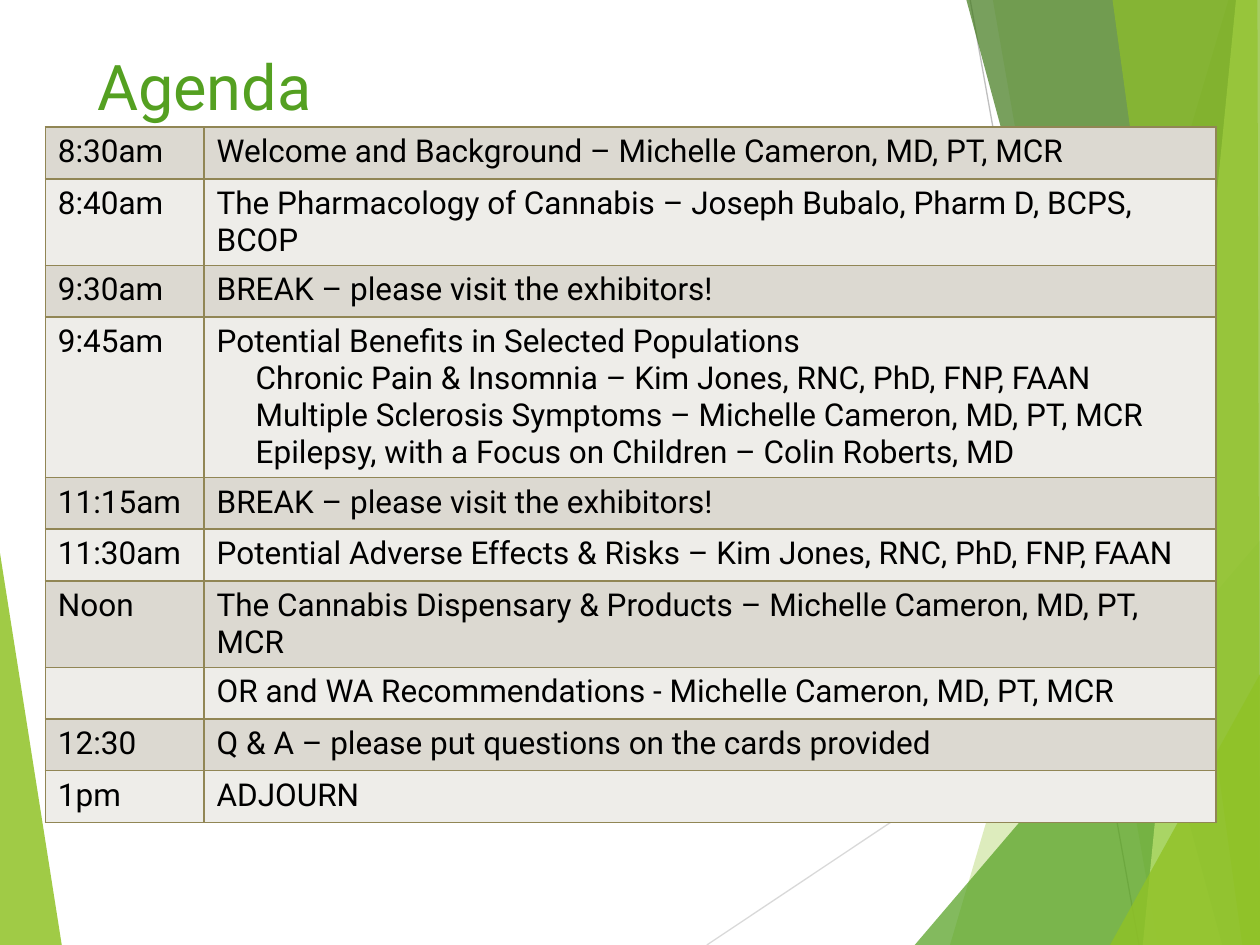
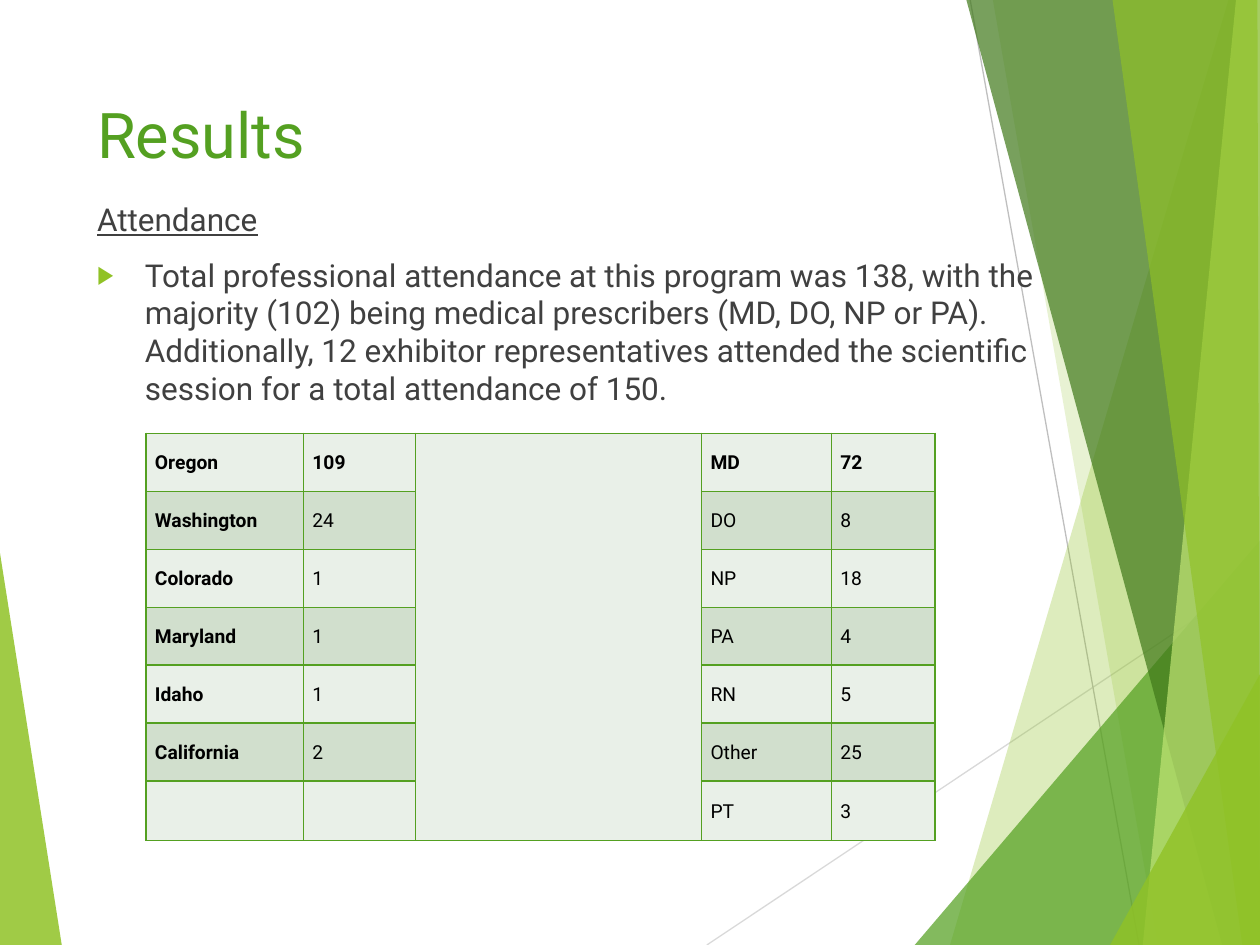
"""Build the agenda and results slides of a cannabis education program."""
from lxml import etree
from pptx import Presentation
from pptx.dml.color import RGBColor
from pptx.enum.shapes import MSO_CONNECTOR
from pptx.enum.text import MSO_ANCHOR, MSO_AUTO_SIZE, PP_ALIGN
from pptx.oxml.ns import qn
from pptx.util import Pt

PX = 9144
FONT = "Roboto"
STRAIGHT = MSO_CONNECTOR.STRAIGHT
TOP, MIDDLE = MSO_ANCHOR.TOP, MSO_ANCHOR.MIDDLE
LEFT = PP_ALIGN.LEFT
NO_AUTOFIT = MSO_AUTO_SIZE.NONE

COLORS = {
    "lime": "90C226",
    "green": "54A021",
    "forest": "3F7819",
    "pale": "C0E474",
    "light_gray": "D9D9D9",
    "gray": "BFBFBF",
    "body": "404040",
    "black": "000000",
    "olive": "918655",
    "sand_dark": "DCD9D1",
    "sand_light": "EEEDE9",
    "mint_dark": "D1DFCD",
    "mint_light": "E9F0E8",
}

RAYS = [
    ((561, 750), (1000, 457), "light_gray"),
    ((770, 0), (904, 750), "gray"),
]
LEFT_FACET = ([(0, 439), (49, 750), (0, 750)], "lime", 85)
RIGHT_FACETS = [
    ([(975, 0), (754, 750), (1000, 750), (1000, 0)], "lime", 30),
    ([(788, 0), (919, 750), (1000, 750), (1000, 0)], "lime", 20),
    ([(726, 750), (1000, 429), (1000, 750)], "green", 72),
    ([(767, 0), (970, 750), (1000, 750), (1000, 0)], "forest", 70),
    ([(981, 0), (907, 750), (1000, 750), (1000, 0)], "pale", 70),
    ([(883, 0), (986, 750), (1000, 750), (998, 0)], "lime", 65),
    ([(881, 750), (1000, 535), (1000, 750)], "lime", 80),
]

AGENDA = [
    ("8:30am", "Welcome and Background – Michelle Cameron, MD, PT, MCR"),
    ("8:40am", "The Pharmacology of Cannabis – Joseph Bubalo, Pharm D, BCPS, BCOP"),
    ("9:30am", "BREAK – please visit the exhibitors!"),
    ("9:45am", "Potential Benefits in Selected Populations\n"
               "Chronic Pain & Insomnia – Kim Jones, RNC, PhD, FNP, FAAN\n"
               "Multiple Sclerosis Symptoms – Michelle Cameron, MD, PT, MCR\n"
               "Epilepsy, with a Focus on Children – Colin Roberts, MD"),
    ("11:15am", "BREAK – please visit the exhibitors!"),
    ("11:30am", "Potential Adverse Effects & Risks – Kim Jones, RNC, PhD, FNP, FAAN"),
    ("Noon", "The Cannabis Dispensary & Products – Michelle Cameron, MD, PT, MCR"),
    ("", "OR and WA Recommendations - Michelle Cameron, MD, PT, MCR"),
    ("12:30", "Q & A – please put questions on the cards provided"),
    ("1pm", "ADJOURN"),
]
ATTENDANCE = [
    ("Oregon", "109", "", "MD", "72"),
    ("Washington", "24", "", "DO", "8"),
    ("Colorado", "1", "", "NP", "18"),
    ("Maryland", "1", "", "PA", "4"),
    ("Idaho", "1", "", "RN", "5"),
    ("California", "2", "", "Other", "25"),
    ("", "", "", "PT", "3"),
]


def format_text(paragraph, size, color):
    """Set the font of every run in a paragraph."""
    for run in paragraph.runs:
        run.font.name = FONT
        run.font.size = Pt(size)
        run.font.color.rgb = RGBColor.from_string(COLORS[color])


def add_banded_table(slide, rows, left, top, widths, row_height, size, bands, border):
    """Add a table with alternating row fills and a border round each cell."""
    frame = slide.shapes.add_table(
        len(rows), len(widths), left * PX, top * PX,
        sum(widths) * PX, len(rows) * row_height * PX)
    table = frame.table
    table.first_row = False
    table.horz_banding = False
    for column, width in zip(table.columns, widths):
        column.width = width * PX
    for r, row in enumerate(rows):
        table.rows[r].height = row_height * PX
        for c, text in enumerate(row):
            cell = table.cell(r, c)
            cell.fill.solid()
            cell.fill.fore_color.rgb = RGBColor.from_string(COLORS[bands[r % 2]])
            if text:
                cell.text_frame.text = text
            for paragraph in cell.text_frame.paragraphs:
                format_text(paragraph, size, "black")
    for properties in frame.element.iter(qn("a:tcPr")):
        for position, side in enumerate(("lnL", "lnR", "lnT", "lnB")):
            edge = etree.Element(qn(f"a:{side}"), w=str(Pt(1)))
            paint = etree.SubElement(edge, qn("a:solidFill"))
            etree.SubElement(paint, qn("a:srgbClr"), val=COLORS[border])
            properties.insert(position, edge)
    return table


prs = Presentation()
prs.slide_width, prs.slide_height = 1000 * PX, 750 * PX
agenda_slide = prs.slides.add_slide(prs.slide_layouts[5])
results_slide = prs.slides.add_slide(prs.slide_layouts[1])

for slide, heading, title_top in ((agenda_slide, "Agenda", 29), (results_slide, "Results", 67)):
    shapes = slide.shapes
    placeholders = list(slide.placeholders)

    for stage in ([LEFT_FACET], RAYS, RIGHT_FACETS):
        for part in stage:
            if stage is RAYS:
                start, end, color = part
                ray = shapes.add_connector(
                    STRAIGHT, start[0] * PX, start[1] * PX, end[0] * PX, end[1] * PX)
                ray.line.color.rgb = RGBColor.from_string(COLORS[color])
                ray.line.width = Pt(0.75)
                etree.SubElement(ray.element.spPr, qn("a:effectLst"))
                continue
            points, color, opacity = part
            outline = shapes.build_freeform(*points[0], scale=PX)
            outline.add_line_segments(points[1:], close=True)
            facet = outline.convert_to_shape()
            facet.fill.solid()
            facet.fill.fore_color.rgb = RGBColor.from_string(COLORS[color])
            tint = next(facet.element.spPr.iter(qn("a:srgbClr")))
            etree.SubElement(tint, qn("a:alpha"), val=str(opacity * 1000))
            facet.line.fill.background()
            facet.shadow.inherit = False

    for placeholder in placeholders:
        placeholder.element.getparent().append(placeholder.element)

    title = shapes.title
    title.left, title.top, title.width, title.height = 67 * PX, title_top * PX, 694 * PX, 144 * PX
    title.text_frame.text = heading
    title.text_frame.vertical_anchor = TOP
    title.text_frame.margin_top = 9 * PX
    title.text_frame.auto_size = NO_AUTOFIT
    title.text_frame.paragraphs[0].alignment = LEFT
    format_text(title.text_frame.paragraphs[0], 36, "green")

schedule = add_banded_table(
    agenda_slide, AGENDA, 36, 101, (126, 803), 41, 18, ("sand_dark", "sand_light"), "olive")
for talk in schedule.cell(3, 1).text_frame.paragraphs[1:]:
    talk._p.get_or_add_pPr().set("marL", str(31 * PX))

summary = results_slide.placeholders[1]
summary.left, summary.top, summary.width, summary.height = 67 * PX, 154 * PX, 764 * PX, 424 * PX
summary.text_frame.auto_size = NO_AUTOFIT
summary.text_frame.text = (
    "Attendance\n"
    "Total professional attendance at this program was 138, with the majority (102) being "
    "medical prescribers (MD, DO, NP or PA). Additionally, 12 exhibitor representatives "
    "attended the scientific session for a total attendance of 150.")
subheading, total = summary.text_frame.paragraphs
for paragraph, indent in ((subheading, 0), (total, 38)):
    format_text(paragraph, 18, "body")
    paragraph.space_before = Pt(10)
    properties = paragraph._p.get_or_add_pPr()
    properties.set("marL", str(indent * PX))
    properties.set("indent", str(-indent * PX))
subheading.runs[0].font.underline = True
etree.SubElement(subheading._p.get_or_add_pPr(), qn("a:buNone"))
bullet = total._p.get_or_add_pPr()
etree.SubElement(etree.SubElement(bullet, qn("a:buClr")), qn("a:srgbClr"), val=COLORS["lime"])
etree.SubElement(bullet, qn("a:buSzPct"), val="80000")
etree.SubElement(bullet, qn("a:buFont"), typeface=FONT)
etree.SubElement(bullet, qn("a:buChar"), char="▶")

counts = add_banded_table(
    results_slide, ATTENDANCE, 116, 344, (125, 89, 227, 103, 82), 46, 11,
    ("mint_light", "mint_dark"), "green")
counts.rows[6].height = 47 * PX
for r, row in enumerate(ATTENDANCE):
    for c, text in enumerate(row):
        if not text:
            continue
        cell = counts.cell(r, c)
        cell.vertical_anchor = MIDDLE
        cell.margin_left = cell.margin_right = 7 * PX
        cell.margin_top = cell.margin_bottom = 0
        entry = cell.text_frame.paragraphs[0]
        entry.line_spacing = 1.07
        entry.space_after = Pt(8)
        entry.runs[0].font.bold = r == 0 or c == 0
counts.cell(0, 2).merge(counts.cell(6, 2))

prs.save("out.pptx")
